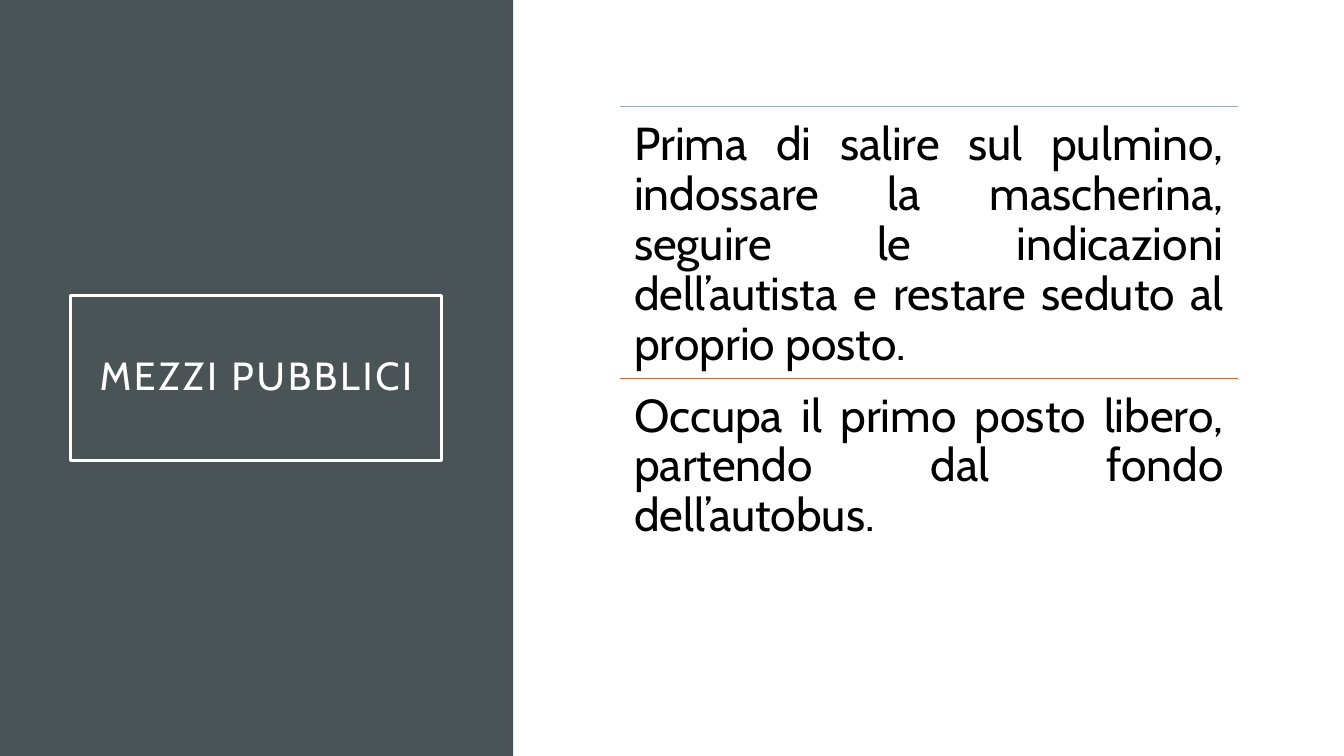
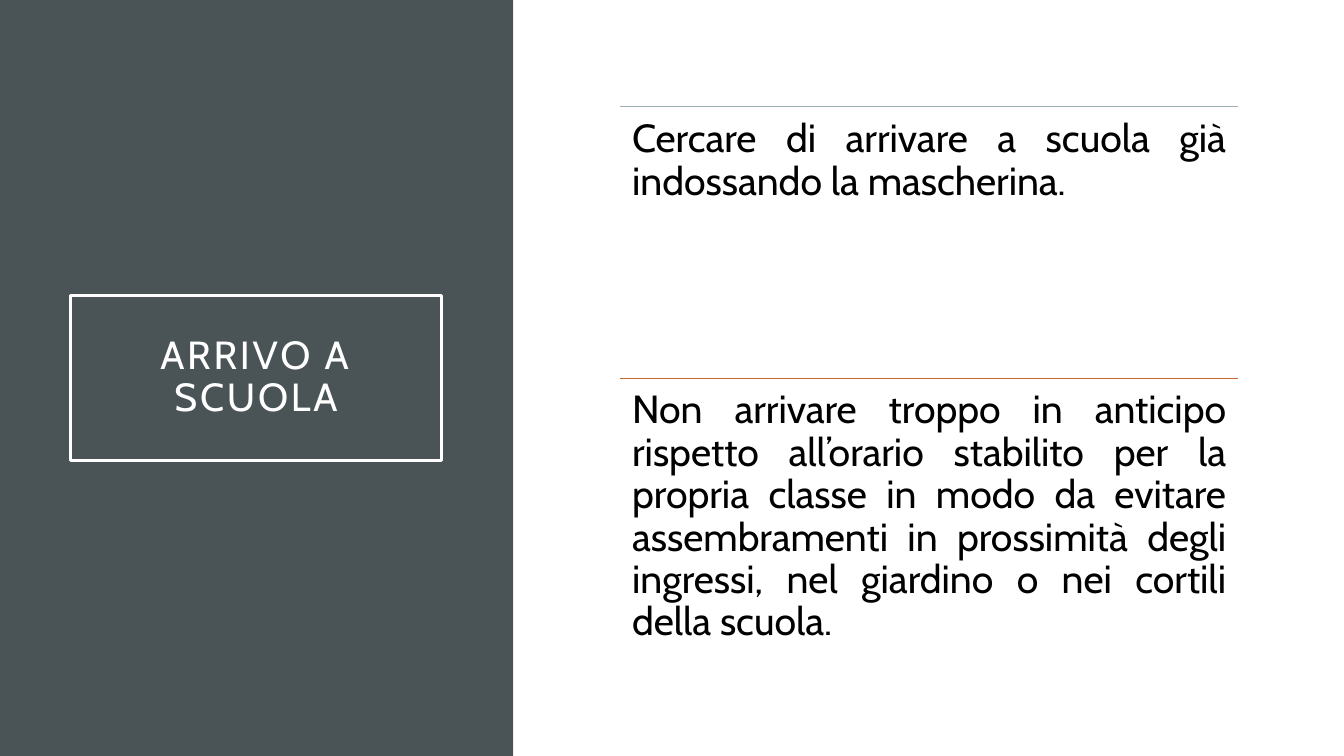
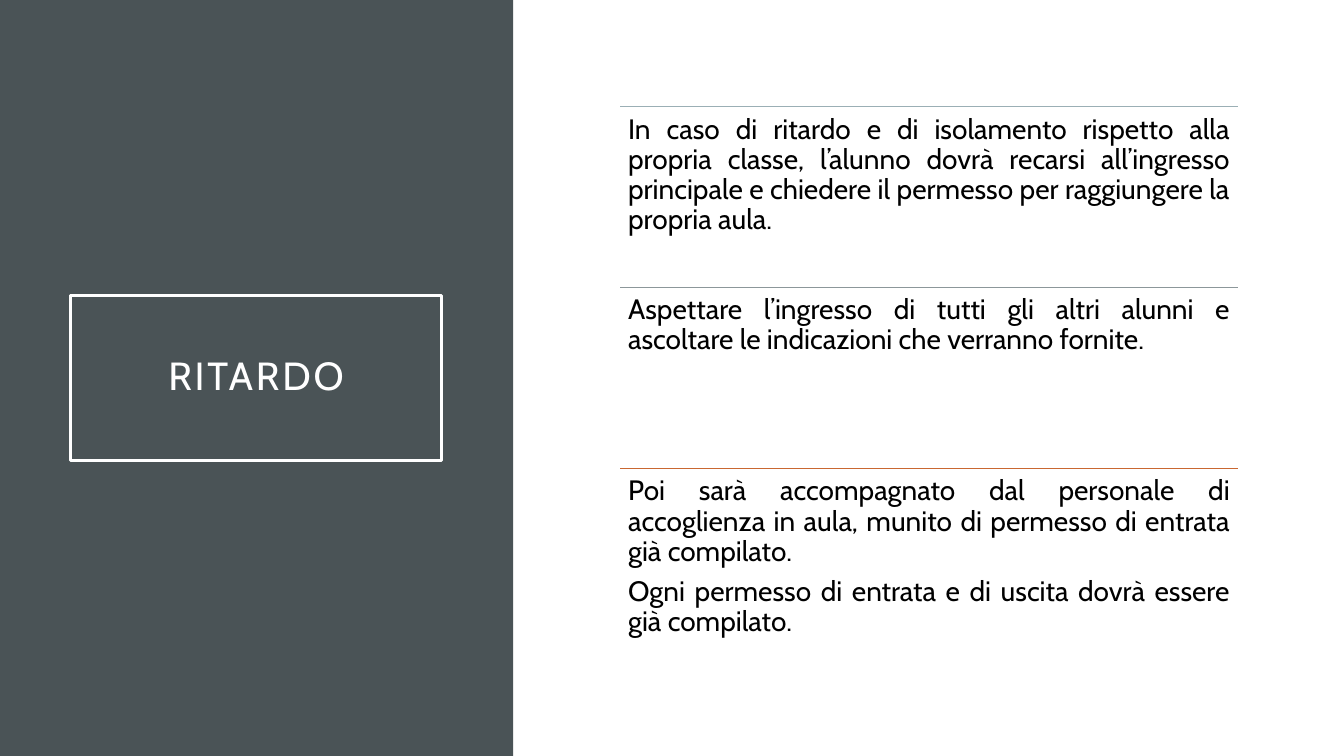
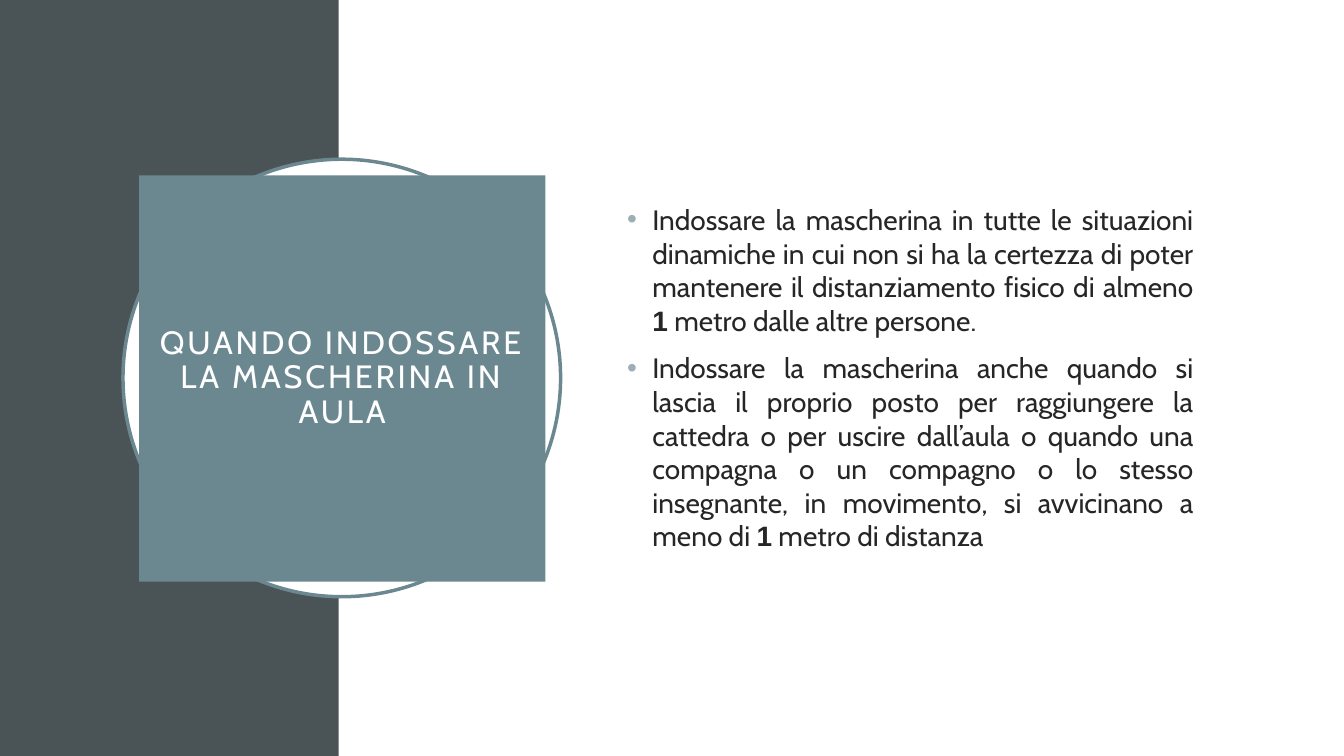
from lxml.etree import SubElement
from pptx import Presentation
from pptx.dml.color import RGBColor
from pptx.enum.shapes import MSO_CONNECTOR, MSO_SHAPE
from pptx.enum.text import MSO_ANCHOR, MSO_AUTO_SIZE, PP_ALIGN
from pptx.oxml.ns import qn
from pptx.util import Emu, Pt

COLORS = {
    "band": "4A5356",
    "white": "FFFFFF",
    "teal": "6B8891",
    "pale_blue": "9BAFB5",
    "gray": "8C979A",
    "orange": "C96731",
    "black": "000000",
    "body": "262626",
}
FONT = "Cabin"
NUMBER_FONT = "Arial"
SLIDE_WIDTH, SLIDE_HEIGHT = 1333, 750
TITLE_ONLY, TITLE_AND_BODY = 5, 1
ROWS_LEFT, ROWS_TOP, ROWS_WIDTH, ROWS_HEIGHT = 615, 106, 613, 538

RULE_SLIDES = [
    ("MEZZI PUBBLICI", 33, [
        ("pale_blue", ["Prima di salire sul pulmino, indossare la mascherina, seguire le "
                       "indicazioni dell’autista e restare seduto al proprio posto."]),
        ("orange", ["Occupa il primo posto libero, partendo dal fondo dell’autobus."]),
    ]),
    ("ARRIVO A SCUOLA", 28, [
        ("pale_blue", ["Cercare di arrivare a scuola già indossando la mascherina."]),
        ("orange", ["Non arrivare troppo in anticipo rispetto all’orario stabilito per la "
                    "propria classe in modo da evitare assembramenti in prossimità degli "
                    "ingressi, nel giardino o nei cortili della scuola."]),
    ]),
    ("RITARDO", 20, [
        ("pale_blue", ["In caso di ritardo e di isolamento rispetto alla propria classe, "
                       "l’alunno dovrà recarsi all’ingresso principale e chiedere il "
                       "permesso per raggiungere la propria aula."]),
        ("gray", ["Aspettare l’ingresso di tutti gli altri alunni e ascoltare le "
                  "indicazioni che verranno fornite."]),
        ("orange", ["Poi sarà accompagnato dal personale di accoglienza in aula, munito di "
                    "permesso di entrata già compilato.",
                    "Ogni permesso di entrata e di uscita dovrà essere già compilato."]),
    ]),
]

MASK_TITLE = "QUANDO INDOSSARE LA MASCHERINA IN AULA"
MASK_BULLETS = [
    ["Indossare la mascherina in tutte le situazioni dinamiche in cui non si ha la certezza "
     "di poter mantenere il distanziamento fisico di almeno ",
     "1", " metro dalle altre persone."],
    ["Indossare la mascherina anche quando si lascia il proprio posto per raggiungere la "
     "cattedra o per uscire dall’aula o quando una compagna o un compagno o lo stesso "
     "insegnante, in movimento, si avvicinano a meno di ",
     "1", " metro di distanza"],
]


def px(value):
    return Emu(value * 9144)


def rgb(name):
    return RGBColor.from_string(COLORS[name])


def place(shape, left, top, width, height):
    shape.left, shape.top = px(left), px(top)
    shape.width, shape.height = px(width), px(height)


def set_fill(shape, color):
    shape.fill.solid()
    shape.fill.fore_color.rgb = rgb(color)


def set_line(shape, color, width):
    shape.line.color.rgb = rgb(color)
    shape.line.width = Pt(width)


def set_frame(text_frame, anchor, inset=None):
    text_frame.word_wrap = True
    text_frame.auto_size = MSO_AUTO_SIZE.NONE
    text_frame.vertical_anchor = anchor
    if inset is not None:
        text_frame.margin_left = text_frame.margin_right = px(inset)
        text_frame.margin_top = text_frame.margin_bottom = px(inset)


def set_font(run, size, color, name=FONT, bold=False):
    run.font.name = name
    run.font.size = Pt(size)
    run.font.bold = bold
    run.font.color.rgb = rgb(color)


def add_shape(slide, kind, left, top, width, height, fill, outline=None):
    shape = slide.shapes.add_shape(kind, px(left), px(top), px(width), px(height))
    shape.shadow.inherit = False
    set_fill(shape, fill)
    if outline:
        set_line(shape, outline, 2.5)
    else:
        shape.line.fill.background()


def add_band(slide, width):
    add_shape(slide, MSO_SHAPE.RECTANGLE, 0, 0, width, SLIDE_HEIGHT, "band")


def format_title(slide, text, size, left, top, width, height):
    title = slide.shapes.title
    slide.shapes.element.append(title.element)
    place(title, left, top, width, height)
    set_frame(title.text_frame, MSO_ANCHOR.MIDDLE, 20)
    title.text_frame.text = text
    paragraph = title.text_frame.paragraphs[0]
    paragraph.alignment = PP_ALIGN.CENTER
    paragraph.line_spacing = 0.9
    for run in paragraph.runs:
        set_font(run, size, "white")
        run._r.get_or_add_rPr().set("spc", "200")
    return title


def add_rule(slide, top, color):
    rule = slide.shapes.add_connector(
        MSO_CONNECTOR.STRAIGHT, px(ROWS_LEFT), px(top), px(ROWS_LEFT + ROWS_WIDTH), px(top))
    set_line(rule, color, 0.5)
    SubElement(rule.element.spPr, qn("a:effectLst"))


def add_row_text(slide, top, height, texts, size):
    box = slide.shapes.add_textbox(px(ROWS_LEFT), px(top), px(ROWS_WIDTH), px(height))
    set_frame(box.text_frame, MSO_ANCHOR.TOP, round(size * 0.42))
    box.text_frame.text = "\n".join(texts)
    for paragraph in box.text_frame.paragraphs:
        paragraph.alignment = PP_ALIGN.JUSTIFY
        paragraph.line_spacing = 0.9
        paragraph.space_after = Pt(size * 0.35)
        for run in paragraph.runs:
            set_font(run, size, "black")


def add_rule_slide(presentation, heading, size, rows):
    slide = presentation.slides.add_slide(presentation.slide_layouts[TITLE_ONLY])
    add_band(slide, 509)
    title = format_title(slide, heading, 28, 70, 293, 368, 164)
    set_line(title, "white", 2.5)
    pitch = ROWS_HEIGHT / len(rows)
    for index, (color, texts) in enumerate(rows):
        top = round(ROWS_TOP + index * pitch)
        add_rule(slide, top, color)
        add_row_text(slide, top, round(pitch), texts, size)


def set_bullet(paragraph, color):
    properties = paragraph._p.get_or_add_pPr()
    properties.set("marL", str(px(25)))
    properties.set("indent", str(px(-25)))
    bullet_color = SubElement(properties, qn("a:buClr"))
    SubElement(bullet_color, qn("a:srgbClr")).set("val", COLORS[color])
    SubElement(properties, qn("a:buFont")).set("typeface", NUMBER_FONT)
    SubElement(properties, qn("a:buChar")).set("char", "•")


def fill_bullets(text_frame, bullets):
    for index, pieces in enumerate(bullets):
        paragraph = text_frame.add_paragraph() if index else text_frame.paragraphs[0]
        paragraph.alignment = PP_ALIGN.JUSTIFY
        paragraph.line_spacing = 1.0
        paragraph.space_before = Pt(10)
        set_bullet(paragraph, "pale_blue")
        for piece in pieces:
            run = paragraph.add_run()
            run.text = piece
            is_number = piece.isdigit()
            set_font(run, 20, "body", NUMBER_FONT if is_number else FONT, is_number)


def add_mask_slide(presentation):
    slide = presentation.slides.add_slide(presentation.slide_layouts[TITLE_AND_BODY])
    add_band(slide, 336)
    add_shape(slide, MSO_SHAPE.OVAL, 122, 158, 434, 434, "white", "teal")
    title = format_title(slide, MASK_TITLE, 23, 138, 174, 403, 403)
    set_fill(title, "teal")
    body = slide.placeholders[1]
    place(body, 612, 153, 582, 443)
    set_frame(body.text_frame, MSO_ANCHOR.MIDDLE)
    fill_bullets(body.text_frame, MASK_BULLETS)


def main():
    presentation = Presentation()
    presentation.slide_width = px(SLIDE_WIDTH)
    presentation.slide_height = px(SLIDE_HEIGHT)
    for heading, size, rows in RULE_SLIDES:
        add_rule_slide(presentation, heading, size, rows)
    add_mask_slide(presentation)
    presentation.save("out.pptx")


if __name__ == "__main__":
    main()
